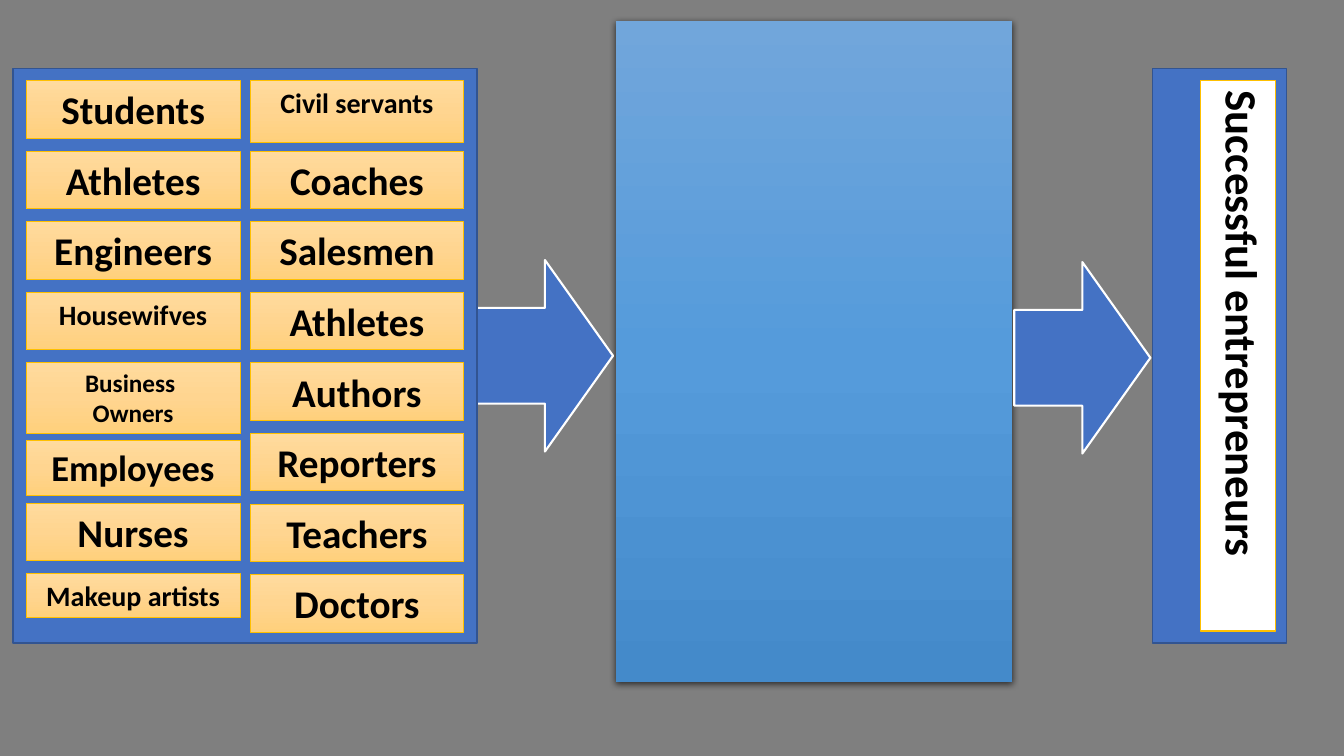
from dataclasses import dataclass
from typing import Any, Optional

import pptx
import pptx.dml.color
import pptx.enum.shapes
import pptx.enum.text
import pptx.oxml
import pptx.oxml.ns
import pptx.util
from lxml import etree

COLORS = {
    "black": "000000", "white": "FFFFFF", "blue": "4472C4", "navy": "325491", "gold": "FFC000",
}
SKY = ("71A6DB", "559BDB", "448ACA")
SAND = ("FFDB9E", "FFD590", "FFD07C")
GRID = pptx.util.Inches(0.1)
ROW_PITCH = 7
TOP_ROW = 8
COLUMNS = (2.6, 24.8)
LABEL_WIDTH = 21.2
RECT = pptx.enum.shapes.MSO_SHAPE.RECTANGLE
ARROW = pptx.enum.shapes.MSO_SHAPE.RIGHT_ARROW


@dataclass(frozen=True)
class Box:
    col: float
    row: float
    cols: float
    rows: float


@dataclass(frozen=True)
class Label:
    text: str
    size: int = 28
    rows: float = 5.7
    shift: float = 0


LABELS = (
    (
        Label("Students"), Label("Athletes"), Label("Engineers"),
        Label("Housewifves", 20), Label("Business \vOwners", 18, 7.1, -0.1),
        Label("Employees", 26, 5.4, 0.7), Label("Nurses", shift=-0.1),
        Label("Makeup artists", 20, 4.4, -0.1),
    ),
    (
        Label("Civil servants", 20, 6.1), Label("Coaches"), Label("Salesmen"), Label("Athletes"),
        Label("Authors"), Label("Reporters"), Label("Teachers"), Label("Doctors"),
    ),
)
ARROWS = (Box(47.3, 25.8, 13.5, 19), Box(100.6, 26, 13.5, 19))


def rgb(name: str) -> pptx.dml.color.RGBColor:
    return pptx.dml.color.RGBColor.from_string(COLORS[name])


def add_box(shapes: Any, box: Box, fill: Optional[str] = None, line: Optional[str] = None,
            width: float = 1, kind: Any = RECT) -> Any:
    sp = shapes.add_shape(kind, *(round(n * GRID) for n in (box.col, box.row, box.cols, box.rows)))
    sp.shadow.inherit = False
    if fill:
        sp.fill.solid()
        sp.fill.fore_color.rgb = rgb(fill)
    if line:
        sp.line.color.rgb = rgb(line)
        sp.line.width = pptx.util.Pt(width)
    else:
        sp.line.fill.background()
    return sp


def set_gradient(sp: Any, colors: tuple[str, ...]) -> None:
    sp.fill.gradient()
    sp.fill.gradient_angle = 270
    qn = pptx.oxml.ns.qn
    stops = sp._element.spPr.find(f".//{qn('a:gsLst')}")
    for stop in list(stops):
        stops.remove(stop)
    for i, color in enumerate(colors):
        stop = etree.SubElement(stops, qn("a:gs"), pos=str(i * 50000))
        etree.SubElement(stop, qn("a:srgbClr"), val=color)


def set_alpha(color: Any, percent: int) -> None:
    etree.SubElement(color, pptx.oxml.ns.qn("a:alpha"), val=str(percent * 1000))


def add_shadow(sp: Any) -> None:
    qn = pptx.oxml.ns.qn
    effects = sp._element.spPr.find(qn("a:effectLst"))
    shadow = etree.SubElement(effects, qn("a:outerShdw"), blurRad=str(pptx.util.Pt(4.5)),
                              dist=str(pptx.util.Pt(1.5)), dir="5400000", algn="ctr", rotWithShape="0")
    set_alpha(etree.SubElement(shadow, qn("a:srgbClr"), val=COLORS["black"]), 63)


def set_text(sp: Any, text: str, *, size: int, vert: Optional[str] = None) -> None:
    tf = sp.text_frame
    tf.word_wrap = True
    tf.auto_size = pptx.enum.text.MSO_AUTO_SIZE.SHAPE_TO_FIT_TEXT
    tf.vertical_anchor = pptx.enum.text.MSO_ANCHOR.TOP
    if vert:
        tf._txBody.bodyPr.set("vert", vert)
    p = tf.paragraphs[0]
    p.text = text
    p.alignment = pptx.enum.text.PP_ALIGN.CENTER
    for r in p.runs:
        r.font.name = "Calibri"
        r.font.size = pptx.util.Pt(size)
        r.font.bold = True
        r.font.color.rgb = rgb("black")


def main() -> None:
    prs = pptx.Presentation()
    prs.slide_width = pptx.util.Inches(13.33)
    prs.slide_height = pptx.util.Inches(7.5)
    s = prs.slides.add_slide(prs.slide_layouts[6])

    shade = add_box(s.shapes, Box(0, 0, 133.3, 75), "black")
    set_alpha(shade._element.spPr.find(f".//{pptx.oxml.ns.qn('a:srgbClr')}"), 50)

    center = add_box(s.shapes, Box(61.1, 2.1, 39.3, 65.6))
    set_gradient(center, SKY)
    add_shadow(center)

    result = s.shapes.add_group_shape().shapes
    add_box(result, Box(114.3, 6.8, 13.3, 57), "blue", "navy")
    banner = add_box(result, Box(119.1, 8, 7.4, 54.6), "white", "gold")
    set_text(banner, "Successful entrepreneurs", size=32, vert="eaVert")

    for arrow in ARROWS:
        add_box(s.shapes, arrow, "blue", "white", 1.5, ARROW)

    people = s.shapes.add_group_shape().shapes
    add_box(people, Box(1.3, 6.8, 46, 57), "blue", "navy")
    for col, labels in zip(COLUMNS, LABELS):
        for i, label in enumerate(labels):
            row = TOP_ROW + i * ROW_PITCH + label.shift
            sp = add_box(people, Box(col, row, LABEL_WIDTH, label.rows), line="gold", width=0.5)
            set_gradient(sp, SAND)
            set_text(sp, label.text, size=label.size)

    prs.save("out.pptx")


if __name__ == "__main__":
    main()
